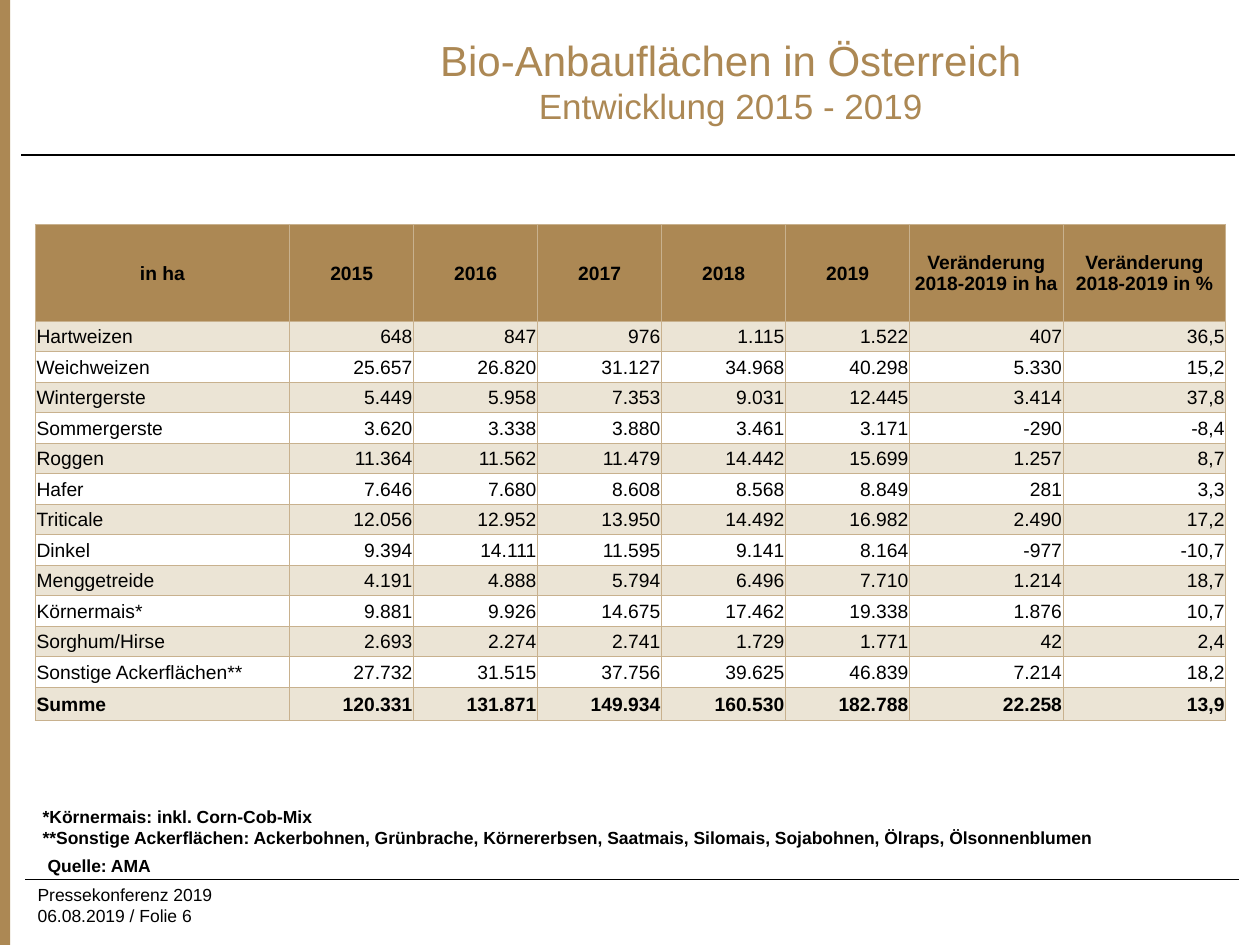
from typing import NamedTuple

from lxml import etree
from pptx import Presentation
from pptx import util as u
from pptx.dml.color import RGBColor
from pptx.enum import shapes, text
from pptx.oxml import ns

GOLD = RGBColor(0xAC, 0x88, 0x54)
SAND = RGBColor(0xEB, 0xE4, 0xD5)
BLACK = RGBColor(0, 0, 0)
EDGE = RGBColor(0xC8, 0xB1, 0x8E)
FONT = "Arial"
ALIGN = text.PP_ALIGN


class Box(NamedTuple):
    left: float
    top: float
    width: float
    height: float


class Note(NamedTuple):
    box: Box
    lines: list[str]
    bold: bool = True


class Row(NamedTuple):
    name: str
    vals: str


# Content
HEADS = ["in ha", "2015", "2016", "2017", "2018", "2019",
         "Veränderung 2018-2019 in ha", "Veränderung 2018-2019 in %"]
CROPS = [
    Row("Hartweizen", "648 847 976 1.115 1.522 407 36,5"),
    Row("Weichweizen", "25.657 26.820 31.127 34.968 40.298 5.330 15,2"),
    Row("Wintergerste", "5.449 5.958 7.353 9.031 12.445 3.414 37,8"),
    Row("Sommergerste", "3.620 3.338 3.880 3.461 3.171 -290 -8,4"),
    Row("Roggen", "11.364 11.562 11.479 14.442 15.699 1.257 8,7"),
    Row("Hafer", "7.646 7.680 8.608 8.568 8.849 281 3,3"),
    Row("Triticale", "12.056 12.952 13.950 14.492 16.982 2.490 17,2"),
    Row("Dinkel", "9.394 14.111 11.595 9.141 8.164 -977 -10,7"),
    Row("Menggetreide", "4.191 4.888 5.794 6.496 7.710 1.214 18,7"),
    Row("Körnermais*", "9.881 9.926 14.675 17.462 19.338 1.876 10,7"),
    Row("Sorghum/Hirse", "2.693 2.274 2.741 1.729 1.771 42 2,4"),
    Row("Sonstige Ackerflächen**", "27.732 31.515 37.756 39.625 46.839 7.214 18,2"),
    Row("Summe", "120.331 131.871 149.934 160.530 182.788 22.258 13,9"),
]
NOTES = [
    Note(Box(0.2, 6.97, 3.31, 0.4),
         ["Pressekonferenz 2019", "06.08.2019 / Folie 6"], bold=False),
    Note(Box(0.24, 6.35, 9.45, 0.44),
         ["*Körnermais: inkl. Corn-Cob-Mix",
          "**Sonstige Ackerflächen: Ackerbohnen, Grünbrache, Körnererbsen, "
          "Saatmais, Silomais, Sojabohnen, Ölraps, Ölsonnenblumen"]),
    Note(Box(0.28, 6.74, 9.45, 0.24), ["Quelle: AMA"]),
]

# Table grid
GRID = Box(0.28, 1.78, 9.45, 3.94)
NAME_W, HA_W, PCT_W = 2.02, 1.22, 1.29
YEAR_W = (GRID.width - NAME_W - HA_W - PCT_W) / 5
WIDTHS = [NAME_W] + [YEAR_W] * 5 + [HA_W, PCT_W]
HEAD_H, SUM_H = 0.77, 0.26
CROP_H = (GRID.height - HEAD_H - SUM_H) / (len(CROPS) - 1)
HEIGHTS = [HEAD_H] + [CROP_H] * (len(CROPS) - 1) + [SUM_H]


def place(box: Box) -> list[u.Inches]:
    return [u.Inches(side) for side in box]


def add_run(para, words: str, size: float, color=BLACK, bold=False) -> None:
    run = para.add_run()
    run.text = words
    font = run.font
    font.name, font.size, font.bold = FONT, u.Pt(size), bold
    font.color.rgb = color


def add_rule(slide, left: float, top: float, width: float) -> None:
    rule = slide.shapes.add_connector(
        shapes.MSO_CONNECTOR.STRAIGHT,
        *place((left, top, left + width, top)))
    rule.line.color.rgb = BLACK
    rule.line.width = u.Pt(0.75)
    etree.SubElement(rule._element.spPr, ns.qn("a:effectLst"))


def add_note(slide, note: Note) -> None:
    frame = slide.shapes.add_textbox(*place(note.box)).text_frame
    frame.word_wrap = True
    for i, line in enumerate(note.lines):
        para = frame.add_paragraph() if i else frame.paragraphs[0]
        add_run(para, line, 10, bold=note.bold)


def add_edges(cell) -> None:
    props = cell._tc.get_or_add_tcPr()
    for i, side in enumerate(("lnL", "lnR", "lnT", "lnB")):
        line = etree.Element(ns.qn(f"a:{side}"), w=str(u.Pt(0.5)))
        fill = etree.SubElement(line, ns.qn("a:solidFill"))
        etree.SubElement(fill, ns.qn("a:srgbClr"), val=str(EDGE))
        props.insert(i, line)


def fill_cell(cell, words: str, align, bold: bool, color) -> None:
    cell.margin_left = cell.margin_right = cell.margin_top = u.Inches(0.01)
    cell.margin_bottom = 0
    cell.vertical_anchor = text.MSO_ANCHOR.MIDDLE
    if color is None:
        cell.fill.background()
    else:
        cell.fill.solid()
        cell.fill.fore_color.rgb = color
    add_edges(cell)
    para = cell.text_frame.paragraphs[0]
    para.alignment = align
    add_run(para, words, 11, bold=bold)


def add_grid(slide) -> None:
    grid = slide.shapes.add_table(
        len(HEIGHTS), len(WIDTHS), *place(GRID)).table
    grid.first_row = grid.horz_banding = False
    for col, width in zip(grid.columns, WIDTHS):
        col.width = u.Inches(width)
    for row, height in zip(grid.rows, HEIGHTS):
        row.height = u.Inches(height)
    for c, head in enumerate(HEADS):
        fill_cell(grid.cell(0, c), head, ALIGN.CENTER, True, GOLD)
    for r, crop in enumerate(CROPS, 1):
        color = SAND if r % 2 else None
        for c, words in enumerate([crop.name] + crop.vals.split()):
            align = ALIGN.RIGHT if c else ALIGN.LEFT
            fill_cell(grid.cell(r, c), words, align, r == len(CROPS), color)


def add_title(slide) -> None:
    title = slide.shapes.title
    title.left, title.top, title.width, title.height = place(
        Box(1.85, 0.13, 7.9, 1.02))
    title.text_frame.vertical_anchor = text.MSO_ANCHOR.MIDDLE
    para = title.text_frame.paragraphs[0]
    para.alignment = ALIGN.CENTER
    add_run(para, "Bio-Anbauflächen in Österreich", 24, GOLD)
    para.add_line_break()
    add_run(para, "Entwicklung 2015 - 2019", 20, GOLD)


def main() -> None:
    deck = Presentation()
    deck.slide_width, deck.slide_height = u.Inches(10), u.Inches(7.5)
    slide = deck.slides.add_slide(deck.slide_layouts[5])

    # Side bar and rules
    bar = slide.shapes.add_shape(
        shapes.MSO_SHAPE.RECTANGLE, *place(Box(-0.01, 0, 0.09, 7.5)))
    bar.shadow.inherit = False
    bar.fill.solid()
    bar.fill.fore_color.rgb = GOLD
    bar.line.fill.background()
    add_rule(slide, 0.17, 1.23, 9.63)
    add_rule(slide, 0.2, 6.98, 9.63)

    # Title, notes and table
    add_title(slide)
    for note in NOTES:
        add_note(slide, note)
    add_grid(slide)
    deck.save("out.pptx")


if __name__ == "__main__":
    main()
